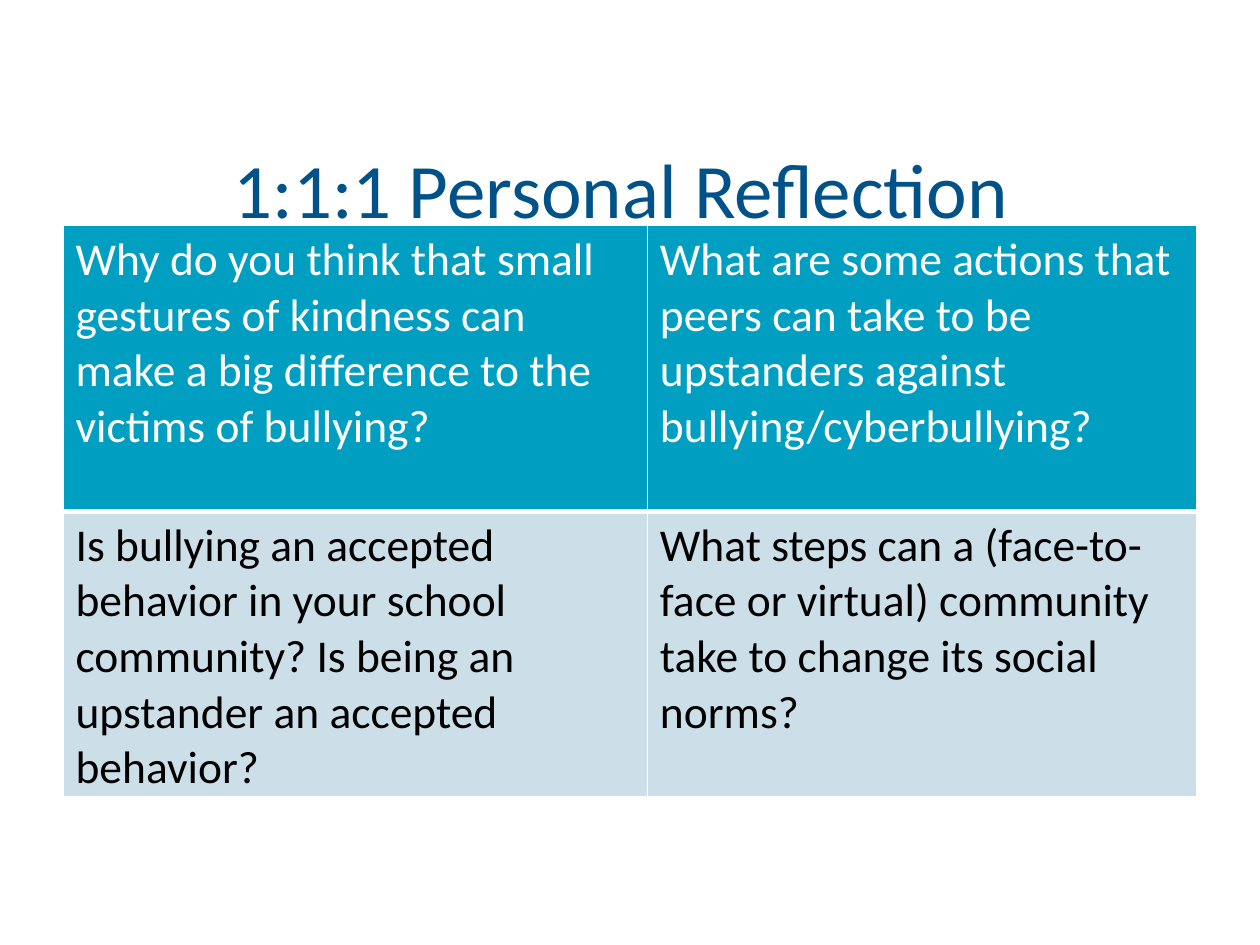
from lxml.etree import SubElement
from pptx import Presentation
from pptx.dml.color import RGBColor
from pptx.enum.text import MSO_ANCHOR, PP_ALIGN
from pptx.oxml.ns import qn
from pptx.util import Cm, Pt

TITLE = "1:1:1 Personal Reflection "
QUESTIONS = [
    [
        "Why do you think that small gestures of kindness can make a big difference to the victims of bullying?",
        "What are some actions that peers can take to be upstanders against bullying/cyberbullying?",
    ],
    [
        "Is bullying an accepted behavior in your school community? Is being an upstander an accepted behavior?",
        "What steps can a (face-to-face or virtual) community take to change its social norms?",
    ],
]
THEME = {
    "border": "FFFFFF",
    "title": {"name": "Calibri", "size": Pt(44), "bold": False, "color": "005288"},
    "rows": [
        {"fill": "009FC2", "color": "FFFFFF", "borders": {"L": 1, "R": 1, "T": 1, "B": 3}},
        {"fill": "CCDFE9", "color": "000000", "borders": {"L": 1, "R": 1, "T": 3, "B": 1}},
    ],
    "cell": {"name": "Calibri", "size": Pt(26), "bold": False},
}
LEFT, WIDTH = Cm(1.27), Cm(22.86)
COLUMN_WIDTHS = [Cm(11.78), Cm(11.08)]
ROW_HEIGHT = Cm(5.76)


def write(frame, text, style, align):
    para = frame.paragraphs[0]
    para.alignment = align
    span = para.add_run()
    span.text = text
    for name, value in style.items():
        if name == "color":
            span.font.color.rgb = RGBColor.from_string(value)
        else:
            setattr(span.font, name, value)


def add_borders(cell, widths):
    properties = cell._tc.get_or_add_tcPr()
    for index, (side, width) in enumerate(widths.items()):
        line = properties.makeelement(qn(f"a:ln{side}"), {"w": str(Pt(width))})
        fill = SubElement(line, qn("a:solidFill"))
        SubElement(fill, qn("a:srgbClr"), val=THEME["border"])
        properties.insert(index, line)


def add_title(page):
    box = page.shapes.add_textbox(LEFT, Cm(2.67), WIDTH, Cm(2.23))
    frame = box.text_frame
    frame.word_wrap = True
    frame.vertical_anchor = MSO_ANCHOR.MIDDLE
    write(frame, TITLE, THEME["title"], PP_ALIGN.CENTER)


def add_questions(page):
    count = len(QUESTIONS)
    table = page.shapes.add_table(
        count, len(COLUMN_WIDTHS), LEFT, Cm(4.55), WIDTH, ROW_HEIGHT * count
    ).table
    for column, width in zip(table.columns, COLUMN_WIDTHS):
        column.width = width
    for row, texts, look in zip(table.rows, QUESTIONS, THEME["rows"]):
        row.height = ROW_HEIGHT
        for cell, text in zip(row.cells, texts):
            cell.fill.solid()
            cell.fill.fore_color.rgb = RGBColor.from_string(look["fill"])
            add_borders(cell, look["borders"])
            style = {**THEME["cell"], "color": look["color"]}
            write(cell.text_frame, text, style, PP_ALIGN.LEFT)


def main():
    deck = Presentation()
    deck.slide_width, deck.slide_height = Cm(25.4), Cm(19.05)
    page = deck.slides.add_slide(deck.slide_layouts[6])
    add_title(page)
    add_questions(page)
    deck.save("out.pptx")


if __name__ == "__main__":
    main()
